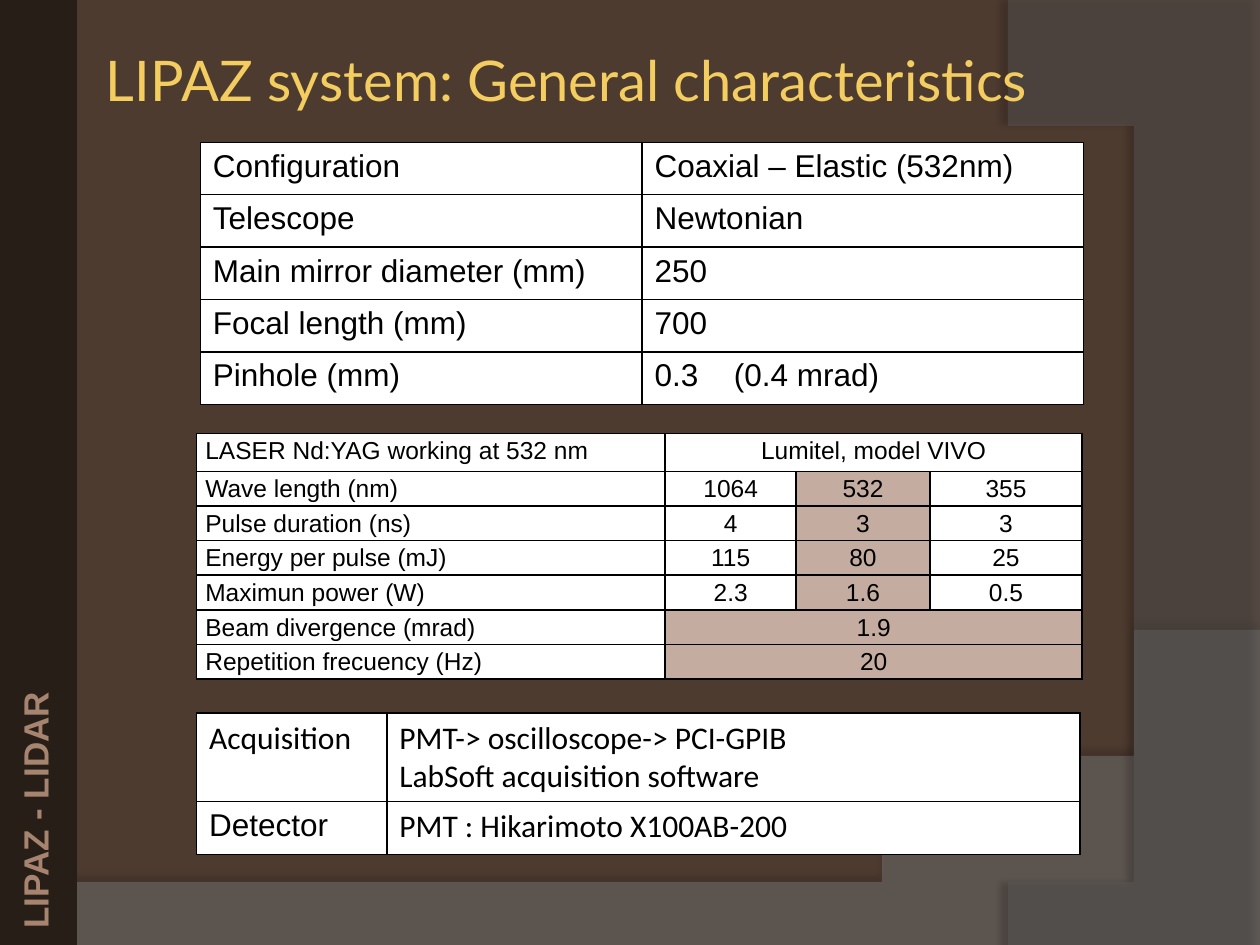
from lxml.etree import SubElement
from pptx import Presentation
from pptx.dml.color import RGBColor
from pptx.enum.shapes import MSO_SHAPE as Shape
from pptx.enum.text import MSO_ANCHOR as Anchor, PP_ALIGN as Align
from pptx.oxml import parse_xml
from pptx.oxml.ns import nsdecls, qn
from pptx.util import Inches, Pt

HEX = {"back": "4E3B30", "bar": "271E18", "title": "F3CD60", "label": "A78470",
       "black": "000000", "white": "FFFFFF", "tan": "C4ADA0",
       "wave": "7F7F7F", "arc": "5E5E5E"}
COL = {name: RGBColor.from_string(code) for name, code in HEX.items()}


def style(par, font, size, color, bold=False):
    par.font.name, par.font.size, par.font.bold = font, Pt(size), bold
    par.font.color.rgb = COL[color]


def add_grid(left, top, cols, rows, data, size, font="Arial", tight=False):
    """Bordered table; a row shorter than the grid merges its last cell."""
    grid = slide.shapes.add_table(
        len(rows), len(cols), Inches(left), Inches(top),
        Inches(sum(cols)), Inches(sum(rows))).table
    grid.first_row = grid.horz_banding = False
    for col, width in zip(grid.columns, cols):
        col.width = Inches(width)
    for i, (row, height) in enumerate(zip(data, rows)):
        grid.rows[i].height = Inches(height)
        for j in range(len(cols)):
            cell = grid.cell(i, j)
            props = cell._tc.get_or_add_tcPr()
            for side in ("lnL", "lnR", "lnT", "lnB"):
                props.append(parse_xml(
                    f'<a:{side} {nsdecls("a")} w="12700"><a:solidFill>'
                    f'<a:srgbClr val="{HEX["black"]}"/></a:solidFill></a:{side}>'))
            cell.fill.solid()
            cell.fill.fore_color.rgb = COL["white"]
            if tight:
                cell.margin_left = cell.margin_right = Inches(0.07)
                cell.margin_top = cell.margin_bottom = 0
            if j < len(row):
                cell.text = row[j]
            for par in cell.text_frame.paragraphs:
                if tight:
                    par.line_spacing = 1.15
                    par.alignment = Align.CENTER if j else Align.LEFT
                style(par, font, size, "black")
        if len(row) < len(cols):
            grid.cell(i, len(row) - 1).merge(grid.cell(i, len(cols) - 1))
    return grid


deck = Presentation()
deck.slide_width, deck.slide_height = Inches(10), Inches(7.5)
slide = deck.slides.add_slide(deck.slide_layouts[6])
slide.background.fill.solid()
slide.background.fill.fore_color.rgb = COL["back"]

# Curved backdrop: corners before the curve, its control points, fill, shadow
curves = [
    ([(0, 7.05), (0, 7.5), (10, 7.5)],
     [(10, 5.2), (5.59, 7.29), (3.91, 7.19), (0, 7.05)], "wave", 45, 35, 3.5, 270),
    ([(8, 0), (10, 0.02), (10, 7.5)],
     [(8.21, 7.5), (9.35, 6.19), (10.18, 3), (8, 0)], "arc", 40, 45, 4, 180),
]
for edge, ctrl, color, alpha, shade, dist, angle in curves:
    points = list(edge)
    for step in range(61):
        t = step / 60
        mix = ((1 - t) ** 3, 3 * t * (1 - t) ** 2, 3 * t * t * (1 - t), t ** 3)
        points.append(tuple(sum(m * c[k] for m, c in zip(mix, ctrl)) for k in (0, 1)))
    pen = slide.shapes.build_freeform(*points[0], scale=Inches(1))
    pen.add_line_segments(points[1:], close=True)
    curve = pen.convert_to_shape()
    curve.fill.solid()
    curve.fill.fore_color.rgb = COL[color]
    curve.line.fill.background()
    tint = curve._element.spPr.find(".//" + qn("a:srgbClr"))
    SubElement(tint, qn("a:alpha")).set("val", str(alpha * 1000))
    curve.shadow.inherit = False
    effects = curve._element.spPr.find(qn("a:effectLst"))
    effects.append(parse_xml(
        f'<a:outerShdw {nsdecls("a")} blurRad="{Pt(4)}" dist="{Pt(dist)}" '
        f'dir="{angle * 60000}"><a:srgbClr val="{HEX["black"]}">'
        f'<a:alpha val="{shade * 1000}"/></a:srgbClr></a:outerShdw>'))

# Title
title = slide.shapes.add_textbox(Inches(0.59), 0, Inches(9.41), Inches(1.25)).text_frame
title.word_wrap = True
title.vertical_anchor = Anchor.MIDDLE
title.margin_left = Inches(0.25)
title.text = "LIPAZ system: General characteristics"
style(title.paragraphs[0], "Lato", 32, "title")

# Laser table
laser = add_grid(1.56, 3.44, [3.72, 1.04, 1.06, 1.21], [0.3] + [0.275] * 6, [
    ("LASER Nd:YAG working at 532 nm", "Lumitel, model VIVO"),
    ("Wave length (nm)", "1064", "532", "355"),
    ("Pulse duration (ns)", "4", "3", "3"),
    ("Energy per pulse (mJ)", "115", "80", "25"),
    ("Maximun power (W)", "2.3", "1.6", "0.5"),
    ("Beam divergence (mrad)", "1.9"),
    ("Repetition frecuency (Hz)", "20"),
], 14, tight=True)
for i, j in [(1, 2), (2, 2), (3, 2), (4, 2), (5, 1), (6, 1)]:
    laser.cell(i, j).fill.fore_color.rgb = COL["tan"]

# Optics table
optics = add_grid(1.59, 1.13, [3.505] * 2, [0.416] * 5, [
    ("Configuration", "Coaxial – Elastic (532nm)"),
    ("Telescope", "Newtonian"),
    ("Main mirror diameter (mm)", "250"),
    ("Focal length (mm)", "700"),
    ("Pinhole (mm)", "0.3\t(0.4 mrad)"),
], 18)
props = optics.cell(4, 1).text_frame.paragraphs[0]._p.get_or_add_pPr()
props.insert(0, parse_xml(
    f'<a:tabLst {nsdecls("a")}><a:tab pos="{Inches(0.63)}" algn="l"/></a:tabLst>'))

# Side bar with its label
bar = slide.shapes.add_shape(Shape.RECTANGLE, 0, 0, Inches(0.61), Inches(7.5))
bar.shadow.inherit = False
bar.fill.solid()
bar.fill.fore_color.rgb = COL["bar"]
bar.line.fill.background()
label = slide.shapes.add_textbox(Inches(-0.77), Inches(6.2), Inches(2.1), Inches(0.44))
label.rotation = 270
label.text_frame.word_wrap = False
label.text_frame.text = "LIPAZ - LIDAR"
style(label.text_frame.paragraphs[0], "Arial", 20, "label", bold=True)

# Acquisition table
signal = add_grid(1.56, 5.66, [1.51, 5.5], [0.7, 0.42], [
    ("Acquisition", "PMT-> oscilloscope-> PCI-GPIB\nLabSoft acquisition software"),
    ("Detector", "PMT : Hikarimoto X100AB-200"),
], 18, font="Calibri")
signal.cell(1, 0).text_frame.paragraphs[0].font.name = "Arial"

deck.save("out.pptx")
